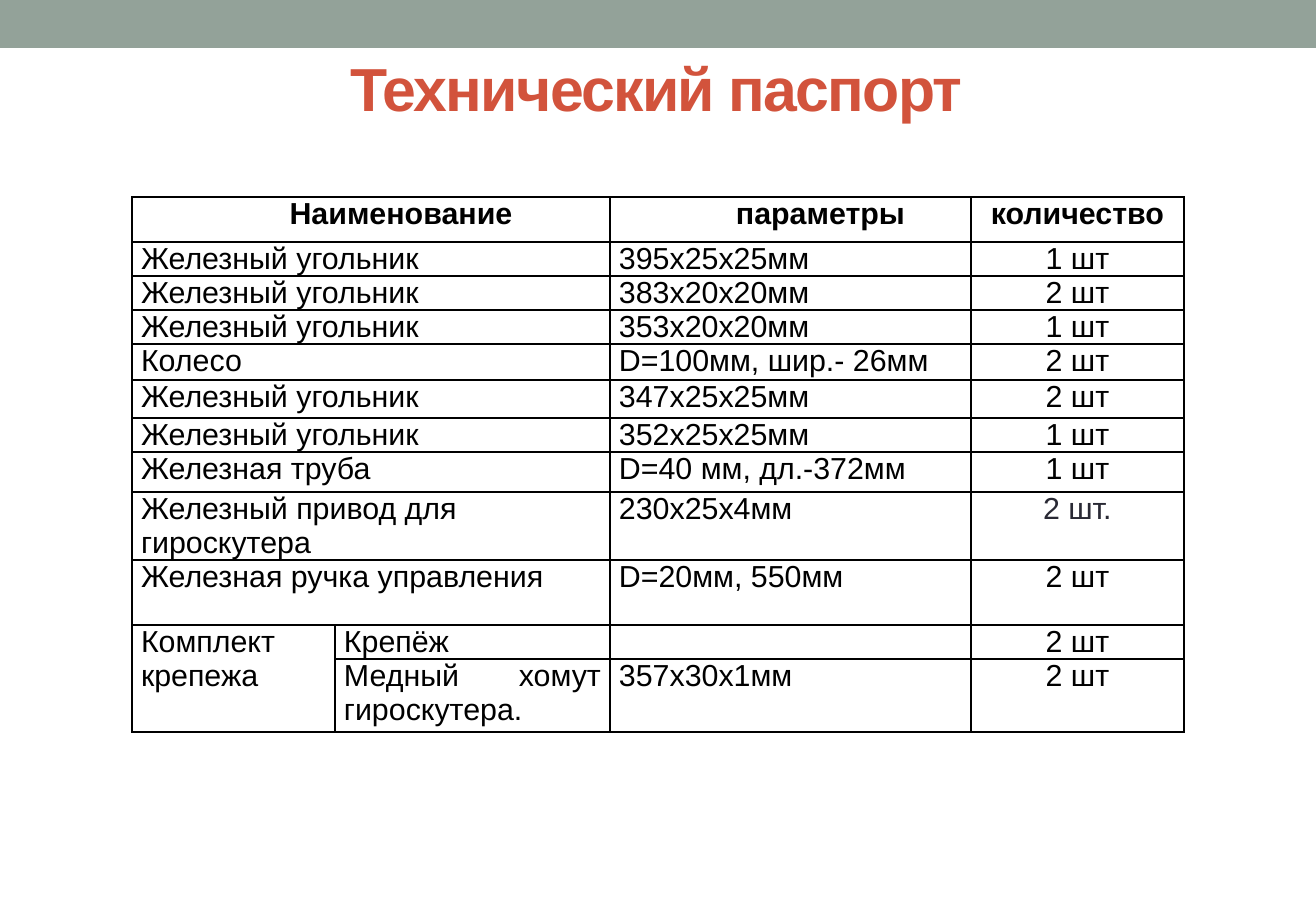
from dataclasses import dataclass

from lxml import etree
from pptx import Presentation
from pptx import util as u
from pptx.dml.color import RGBColor
from pptx.enum import shapes, text
from pptx.oxml import ns

EMU_PER_PX = 7526  # 121.5 px to the inch


@dataclass(frozen=True)
class Theme:
    font: str = "Arial"
    bar: str = "93A299"
    accent: str = "D2533C"
    ink: str = "000000"
    muted: str = "292934"
    title_size: int = 36
    table_size: int = 18
    border_pt: float = 1


@dataclass(frozen=True)
class Part:
    name: str
    parameters: str
    quantity: str
    height: int
    group: str = ""
    justified: bool = False
    quantity_color: str = Theme.ink


THEME = Theme()
ALIGN = text.PP_ALIGN
COLUMNS = (203, 275, 361, 213)
HEADER_HEIGHT = 45
CELL_INSET = 9
HEADER_INDENT = 60
ANGLE = "Железный угольник"
FASTENERS = "Комплект крепежа"

PARTS = (
    Part(ANGLE, "395x25x25мм", "1 шт", 34),
    Part(ANGLE, "383x20x20мм", "2 шт", 34),
    Part(ANGLE, "353x20x20мм", "1 шт", 34),
    Part("Колесо", "D=100мм, шир.- 26мм", "2 шт", 36),
    Part(ANGLE, "347x25x25мм", "2 шт", 38),
    Part(ANGLE, "352x25x25мм", "1 шт", 34),
    Part("Железная труба", "D=40 мм, дл.-372мм", "1 шт", 40),
    Part("Железный привод для гироскутера", "230x25x4мм", "2 шт.", 68,
         quantity_color=THEME.muted),
    Part("Железная ручка управления", "D=20мм, 550мм", "2 шт", 65),
    Part("Крепёж", "", "2 шт", 34, group=FASTENERS, justified=True),
    Part("Медный хомут гироскутера.", "357x30x1мм", "2 шт", 73,
         group=FASTENERS, justified=True),
)


def px(length: int) -> u.Emu:
    return u.Emu(length * EMU_PER_PX)


def write(frame, words: str, *, size: int = THEME.table_size, color: str = THEME.ink,
          bold: bool = False, align=ALIGN.LEFT, indent: int = 0, spacing: int = 0) -> None:
    """Put one formatted paragraph into a text frame."""
    paragraph = frame.paragraphs[0]
    paragraph.alignment = align
    if indent:
        properties = paragraph._p.get_or_add_pPr()
        properties.set("marL", "0")
        properties.set("indent", str(px(indent)))
    run = paragraph.add_run()
    run.text = words
    run.font.name = THEME.font
    run.font.size = u.Pt(size)
    run.font.bold = bold
    run.font.color.rgb = RGBColor.from_string(color)
    if spacing:
        run._r.get_or_add_rPr().set("spc", str(spacing))


def style_cell(cell) -> None:
    """Give a cell its borders, insets and empty fill."""
    properties = cell._tc.get_or_add_tcPr()
    for side in ("a:lnL", "a:lnR", "a:lnT", "a:lnB"):
        line = etree.SubElement(properties, ns.qn(side), w=str(u.Pt(THEME.border_pt)))
        fill = etree.SubElement(line, ns.qn("a:solidFill"))
        etree.SubElement(fill, ns.qn("a:srgbClr"), val=THEME.ink)
    cell.fill.background()
    cell.margin_left = cell.margin_right = px(CELL_INSET)
    cell.margin_top = cell.margin_bottom = 0


def add_bar(slide, width: int) -> None:
    bar = slide.shapes.add_shape(shapes.MSO_SHAPE.RECTANGLE, 0, 0, px(width), px(48))
    bar.shadow.inherit = False
    bar.fill.solid()
    bar.fill.fore_color.rgb = RGBColor.from_string(THEME.bar)
    bar.line.fill.background()


def add_title(slide) -> None:
    title = slide.shapes.title
    title.left, title.top, title.width, title.height = map(px, (64, 44, 1185, 87))
    title.text_frame.vertical_anchor = text.MSO_ANCHOR.MIDDLE
    title.text_frame.word_wrap = True
    write(title.text_frame, "Технический паспорт", size=THEME.title_size,
          color=THEME.accent, bold=True, align=ALIGN.CENTER, spacing=-100)


def add_parts_table(slide) -> None:
    heights = [HEADER_HEIGHT] + [part.height for part in PARTS]
    table = slide.shapes.add_table(len(heights), len(COLUMNS), px(132), px(197),
                                   px(sum(COLUMNS)), px(sum(heights))).table
    table.first_row = table.horz_banding = False
    for column, width in zip(table.columns, COLUMNS):
        column.width = px(width)
    for row, height in zip(table.rows, heights):
        row.height = px(height)
    for cell in table.iter_cells():
        style_cell(cell)

    # Header
    table.cell(0, 0).merge(table.cell(0, 1))
    for column, heading, indent in ((0, "Наименование", HEADER_INDENT),
                                    (2, "параметры", HEADER_INDENT),
                                    (3, "количество", 0)):
        write(table.cell(0, column).text_frame, heading, bold=True,
              align=ALIGN.CENTER, indent=indent)

    # Parts
    for index, part in enumerate(PARTS, start=1):
        if not part.group:
            table.cell(index, 0).merge(table.cell(index, 1))
        write(table.cell(index, 1 if part.group else 0).text_frame, part.name,
              align=ALIGN.JUSTIFY if part.justified else ALIGN.LEFT)
        write(table.cell(index, 2).text_frame, part.parameters)
        write(table.cell(index, 3).text_frame, part.quantity,
              color=part.quantity_color, align=ALIGN.CENTER)

    # Fastener group
    grouped = [index for index, part in enumerate(PARTS, start=1) if part.group]
    group_cell = table.cell(grouped[0], 0)
    group_cell.merge(table.cell(grouped[-1], 0))
    write(group_cell.text_frame, FASTENERS, align=ALIGN.JUSTIFY)


def main() -> None:
    deck = Presentation()
    slide_width, slide_height = 1316, 911
    deck.slide_width, deck.slide_height = px(slide_width), px(slide_height)
    slide = deck.slides.add_slide(deck.slide_layouts.get_by_name("Title Only"))
    add_bar(slide, slide_width)
    add_title(slide)
    add_parts_table(slide)
    deck.save("out.pptx")


if __name__ == "__main__":
    main()
